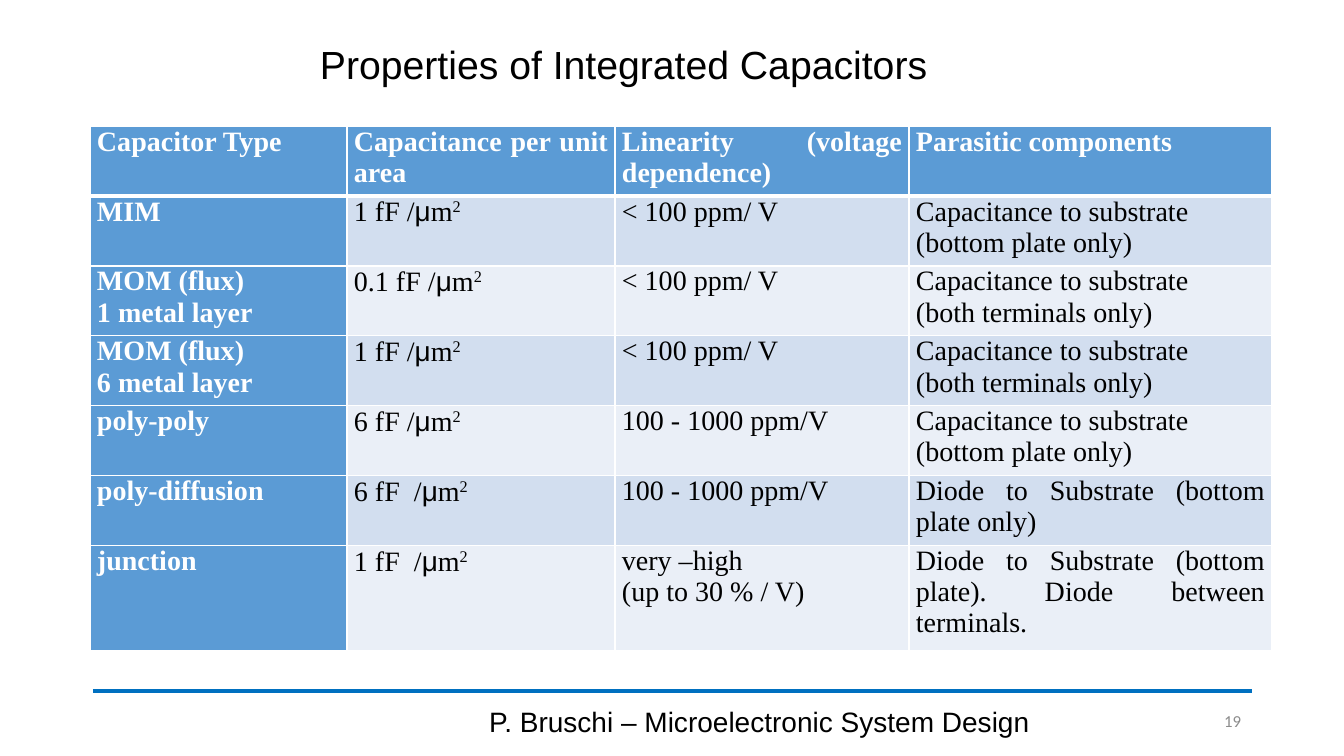
from dataclasses import dataclass

from lxml.etree import SubElement
from pptx import Presentation
from pptx.dml.color import RGBColor
from pptx.enum.shapes import MSO_CONNECTOR
from pptx.enum.text import MSO_ANCHOR, PP_ALIGN
from pptx.oxml import parse_xml
from pptx.oxml.ns import nsdecls, qn
from pptx.util import Pt

EMU_PER_PX = 914400 / 100.8


def px(n):
    return round(n * EMU_PER_PX)


def set_all(obj, **values):
    for name, value in values.items():
        setattr(obj, name, value)


@dataclass(frozen=True)
class Theme:
    sans: str = "Arial"
    serif: str = "Times New Roman"
    number_font: str = "Calibri"
    black: str = "000000"
    white: str = "FFFFFF"
    grey: str = "8C8C8C"
    rule: str = "0070C0"
    header: str = "5B9BD5"
    bands: tuple = ("D2DEEF", "EAEFF7")
    title_size: int = 28
    body_size: int = 20
    number_size: int = 12
    rule_width: float = 2.75
    border: int = 1
    header_border: int = 3


class SlideBuilder:
    def __init__(self, prs, theme):
        self.theme = theme
        self.s = prs.slides.add_slide(prs.slide_layouts[6])

    def run(self, p, text, size, font, color, bold=False, raised=False):
        r = p.add_run()
        r.text = text
        set_all(r.font, size=Pt(size), name=font, bold=bold)
        r.font.color.rgb = RGBColor.from_string(color)
        if raised:
            r.font._element.set("baseline", "30000")

    def text(self, box, text, size, font, color, align, spacing=1.0):
        sp = self.s.shapes.add_textbox(*map(px, box))
        tf = sp.text_frame
        set_all(tf, word_wrap=True, vertical_anchor=MSO_ANCHOR.MIDDLE)
        p = tf.paragraphs[0]
        set_all(p, alignment=align, line_spacing=spacing)
        self.run(p, text, size, font, color)

    def line(self, x1, y1, x2, y2, color, width):
        cxn = self.s.shapes.add_connector(MSO_CONNECTOR.STRAIGHT, *map(px, (x1, y1, x2, y2)))
        cxn.line.color.rgb = RGBColor.from_string(color)
        cxn.line.width = Pt(width)
        SubElement(cxn._element.spPr, qn("a:effectLst"))

    def borders(self, cell, **widths):
        tcPr = cell._tc.get_or_add_tcPr()
        for i, side in enumerate("LRTB"):
            width = Pt(widths.get(side, self.theme.border))
            tcPr.insert(i, parse_xml(
                f'<a:ln{side} {nsdecls("a")} w="{width}"><a:solidFill>'
                f'<a:srgbClr val="{self.theme.white}"/></a:solidFill></a:ln{side}>'))

    def cell(self, cell, text, fill, color, bold):
        t = self.theme
        set_all(cell, margin_left=px(7), margin_right=px(7), margin_top=0, margin_bottom=0)
        cell.fill.solid()
        cell.fill.fore_color.rgb = RGBColor.from_string(fill)
        tf = cell.text_frame
        for i, row_text in enumerate(text.split("\n")):
            p = tf.add_paragraph() if i else tf.paragraphs[0]
            p.alignment = PP_ALIGN.JUSTIFY
            # The unit μm² mixes two fonts and a superscript
            before, mu, after = row_text.partition("μ")
            self.run(p, before, t.body_size, t.serif, color, bold)
            if mu:
                self.run(p, mu, t.body_size, t.sans, color, bold)
                self.run(p, after[0], t.body_size, t.serif, color, bold)
                self.run(p, after[1:], t.body_size, t.serif, color, bold, raised=True)

    def table(self, x, y, widths, heights, rows):
        t = self.theme
        size = (sum(widths), sum(heights))
        frame = self.s.shapes.add_table(len(rows), len(widths), *map(px, (x, y, *size)))
        tbl = frame.table
        for col, width in zip(tbl.columns, widths):
            col.width = px(width)
        for row, height in zip(tbl.rows, heights):
            row.height = px(height)
        for i, row in enumerate(rows):
            for j, text in enumerate(row):
                head = i == 0 or j == 0
                fill = t.header if head else t.bands[(i - 1) % 2]
                cell = tbl.cell(i, j)
                self.cell(cell, text, fill, t.white if head else t.black, head)
                thick = {0: {"B": t.header_border}, 1: {"T": t.header_border}}
                self.borders(cell, **thick.get(i, {}))


BOTTOM_PLATE = "Capacitance to substrate\n(bottom plate only)"
BOTH_TERMINALS = "Capacitance to substrate\n(both terminals only)"
CAPACITORS = [
    ("Capacitor Type", "Capacitance per unit area",
     "Linearity (voltage dependence)", "Parasitic components"),
    ("MIM", "1 fF /μm2", "< 100 ppm/ V", BOTTOM_PLATE),
    ("MOM (flux)\n1 metal layer", "0.1 fF /μm2", "< 100 ppm/ V", BOTH_TERMINALS),
    ("MOM (flux)\n6 metal layer", "1 fF /μm2", "< 100 ppm/ V", BOTH_TERMINALS),
    ("poly-poly", "6 fF /μm2", "100 - 1000 ppm/V", BOTTOM_PLATE),
    ("poly-diffusion", "6 fF  /μm2", "100 - 1000 ppm/V",
     "Diode to Substrate (bottom plate only)"),
    ("junction", "1 fF  /μm2", "very –high\n(up to 30 % / V)",
     "Diode to Substrate (bottom plate). Diode between terminals."),
]


def main():
    prs = Presentation()
    set_all(prs, slide_width=px(1344), slide_height=px(756))
    t = Theme()
    b = SlideBuilder(prs, t)

    # Footer rule
    b.line(93, 691, 1252, 691, t.rule, t.rule_width)

    # Title
    b.text((44, 30, 1159, 73), "Properties of Integrated Capacitors",
           t.title_size, t.sans, t.black, PP_ALIGN.CENTER, 0.9)

    # Footer and slide number
    b.text((446, 701, 627, 40), "P. Bruschi – Microelectronic System Design",
           t.body_size, t.sans, t.black, PP_ALIGN.CENTER)
    b.text((1154, 701, 97, 40), "19", t.number_size, t.number_font, t.grey, PP_ALIGN.RIGHT)

    # Capacitor table
    b.table(90, 126, (257, 268, 294, 363), [70] * 6 + [105], CAPACITORS)

    prs.save("out.pptx")


if __name__ == "__main__":
    main()
